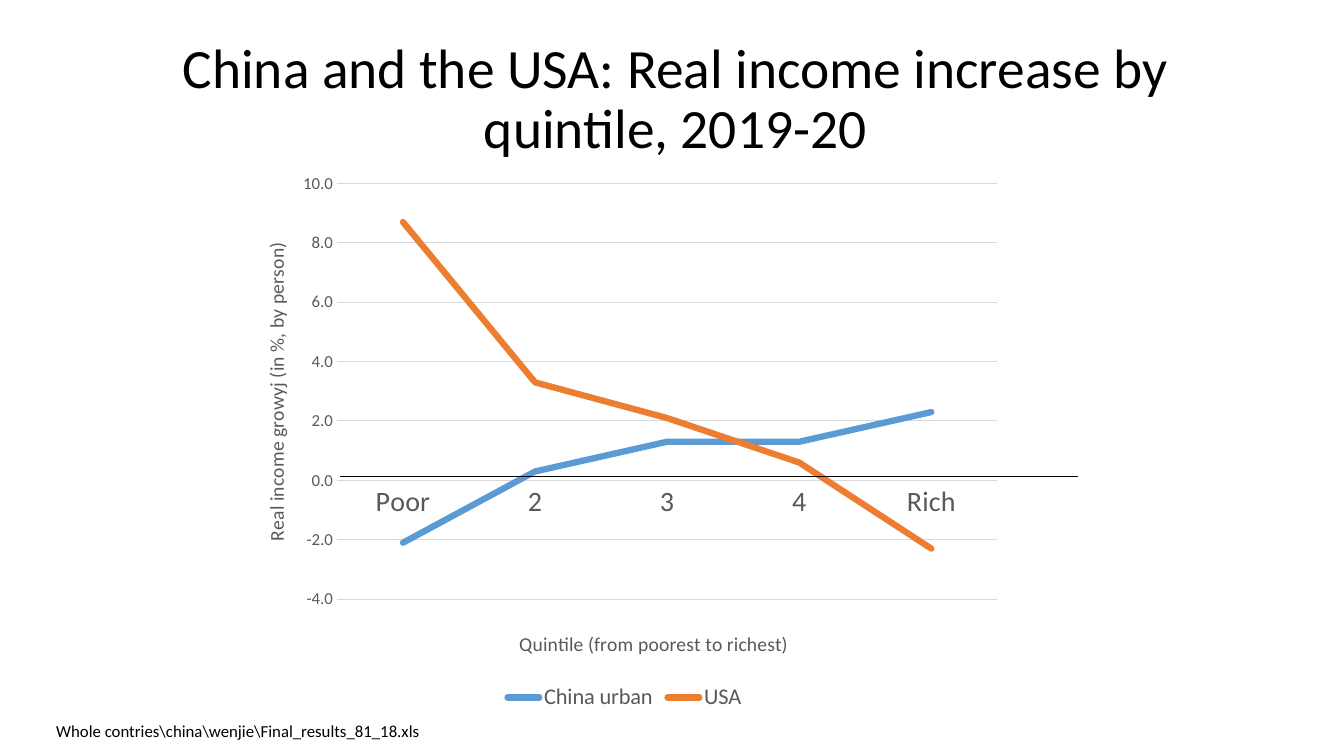
from lxml import etree
from pptx import Presentation, util as u
from pptx.chart import data
from pptx.dml import color
from pptx.enum import chart as chart_enum, shapes, text
from pptx.oxml import ns

# Content
TITLE = "China and the USA: Real income increase by quintile, 2019-20"
SOURCE_NOTE = r"Whole contries\china\wenjie\Final_results_81_18.xls"
CATEGORY_TITLE = "Quintile (from poorest to richest)"
VALUE_TITLE = "Real income growyj (in %, by person)"
QUINTILES = ["Poor", "2", "3", "4", "Rich"]
INCOME_GROWTH = {
    "China urban": [-2.1, 0.3, 1.3, 1.3, 2.3],
    "USA": [8.7, 3.3, 2.1, 0.6, -2.3],
}
VALUE_SCALE = dict(minimum_scale=-4, maximum_scale=10, major_unit=2)

THEME = {
    "font": "Calibri",
    "ink": "000000", "muted": "595959", "grid": "D9D9D9",
    "series": ["5B9BD5", "ED7D31"],
    "title": 39.6, "category": 20, "legend": 16, "axis_title": 14, "body": 12,
    "hairline": 0.5, "grid_line": 0.75, "series_line": 4.5,
}

# Places in points: left, top, width, height
TITLE_BOX = (66.24, 28.8, 832.32, 86.4)
CHART_BOX = (168.48, 115.2, 555.12, 396)
NOTE_BOX = (33.12, 511.2, 448.56, 21.6)
ZERO_LINE = (242.64, 340.56, 769.68, 340.56)

# Places as fractions of the chart
PLOT_AREA = dict(x=0.13, y=0.04, w=0.85, h=0.75)
CATEGORY_TITLE_PLACE = dict(x=0.36, y=0.84)
VALUE_TITLE_PLACE = dict(x=0.03, y=0.14)


def points(values):
    return [u.Pt(value) for value in values]


def assign(target, values):
    for name, value in values.items():
        setattr(target, name, value)


def style_font(font, size, ink="ink"):
    assign(font, dict(name=THEME["font"], size=u.Pt(THEME[size]), bold=False))
    font.color.rgb = color.RGBColor.from_string(THEME[ink])


def style_line(line, rgb, width):
    line.width = u.Pt(THEME[width])
    line.color.rgb = color.RGBColor.from_string(rgb)


def make_layout(place, inner=False):
    layout = etree.Element(ns.qn("c:layout"))
    manual = etree.SubElement(layout, ns.qn("c:manualLayout"))
    settings = {"layoutTarget": "inner"} if inner else {}
    settings.update(xMode="edge", yMode="edge", **place)
    for name, value in settings.items():
        etree.SubElement(manual, ns.qn("c:" + name)).set("val", str(value))
    return layout


def drop_layout(element):
    for layout in element.findall(ns.qn("c:layout")):
        element.remove(layout)


def title_axis(axis, words, place):
    frame = axis.axis_title.text_frame
    frame.text = words
    style_font(frame.paragraphs[0].runs[0].font, "axis_title", "muted")
    element = axis.axis_title._element
    drop_layout(element)
    element.find(ns.qn("c:tx")).addnext(make_layout(place))


def add_title(slide):
    title = slide.shapes.title
    assign(title, dict(zip(("left", "top", "width", "height"), points(TITLE_BOX))))
    frame = title.text_frame
    frame.text = TITLE
    assign(frame, dict(word_wrap=True, auto_size=text.MSO_AUTO_SIZE.NONE,
                       vertical_anchor=text.MSO_ANCHOR.MIDDLE))
    paragraph = frame.paragraphs[0]
    assign(paragraph, dict(alignment=text.PP_ALIGN.CENTER, line_spacing=0.9))
    style_font(paragraph.runs[0].font, "title")


def add_income_chart(slide):
    chart_data = data.CategoryChartData(number_format="0.0")
    chart_data.categories = QUINTILES
    for name, values in INCOME_GROWTH.items():
        chart_data.add_series(name, values)
    chart = slide.shapes.add_chart(
        chart_enum.XL_CHART_TYPE.LINE, *points(CHART_BOX), chart_data).chart
    assign(chart, dict(has_title=False, has_legend=True))
    style_font(chart.font, "body", "muted")
    assign(chart.legend, dict(position=chart_enum.XL_LEGEND_POSITION.BOTTOM,
                              include_in_layout=False))
    style_font(chart.legend.font, "legend", "muted")

    # Series
    chart.plots[0].vary_by_categories = False
    for series, rgb in zip(chart.plots[0].series, THEME["series"]):
        series.smooth = False
        series.marker.style = chart_enum.XL_MARKER_STYLE.NONE
        style_line(series.format.line, rgb, "series_line")
        series._element.find(".//" + ns.qn("a:ln")).set("cap", "rnd")

    # Axes
    category_axis, value_axis = chart.category_axis, chart.value_axis
    for axis, size in ((category_axis, "category"), (value_axis, "body")):
        assign(axis, dict(major_tick_mark=chart_enum.XL_TICK_MARK.NONE,
                          minor_tick_mark=chart_enum.XL_TICK_MARK.NONE))
        style_font(axis.tick_labels.font, size, "muted")
    style_line(category_axis.format.line, THEME["grid"], "grid_line")
    assign(value_axis, dict(VALUE_SCALE, has_major_gridlines=True))
    value_axis.format.line.fill.background()
    style_line(value_axis.major_gridlines.format.line, THEME["grid"], "grid_line")
    assign(value_axis.tick_labels,
           dict(number_format="0.0", number_format_is_linked=False))
    title_axis(category_axis, CATEGORY_TITLE, CATEGORY_TITLE_PLACE)
    title_axis(value_axis, VALUE_TITLE, VALUE_TITLE_PLACE)

    # Plot area
    plot_area = chart._chartSpace.find(".//" + ns.qn("c:plotArea"))
    drop_layout(plot_area)
    plot_area.insert(0, make_layout(PLOT_AREA, inner=True))


def add_source_note(slide):
    frame = slide.shapes.add_textbox(*points(NOTE_BOX)).text_frame
    frame.word_wrap = True
    frame.text = SOURCE_NOTE
    style_font(frame.paragraphs[0].runs[0].font, "body")


def add_zero_line(slide):
    line = slide.shapes.add_connector(
        shapes.MSO_CONNECTOR.STRAIGHT, *points(ZERO_LINE))
    style_line(line.line, THEME["ink"], "hairline")
    etree.SubElement(line._element.spPr, ns.qn("a:effectLst"))


def main():
    presentation = Presentation()
    assign(presentation, dict(slide_width=u.Pt(960), slide_height=u.Pt(540)))
    slide = presentation.slides.add_slide(presentation.slide_layouts[5])
    add_title(slide)
    add_income_chart(slide)
    add_source_note(slide)
    add_zero_line(slide)
    presentation.save("out.pptx")


if __name__ == "__main__":
    main()
